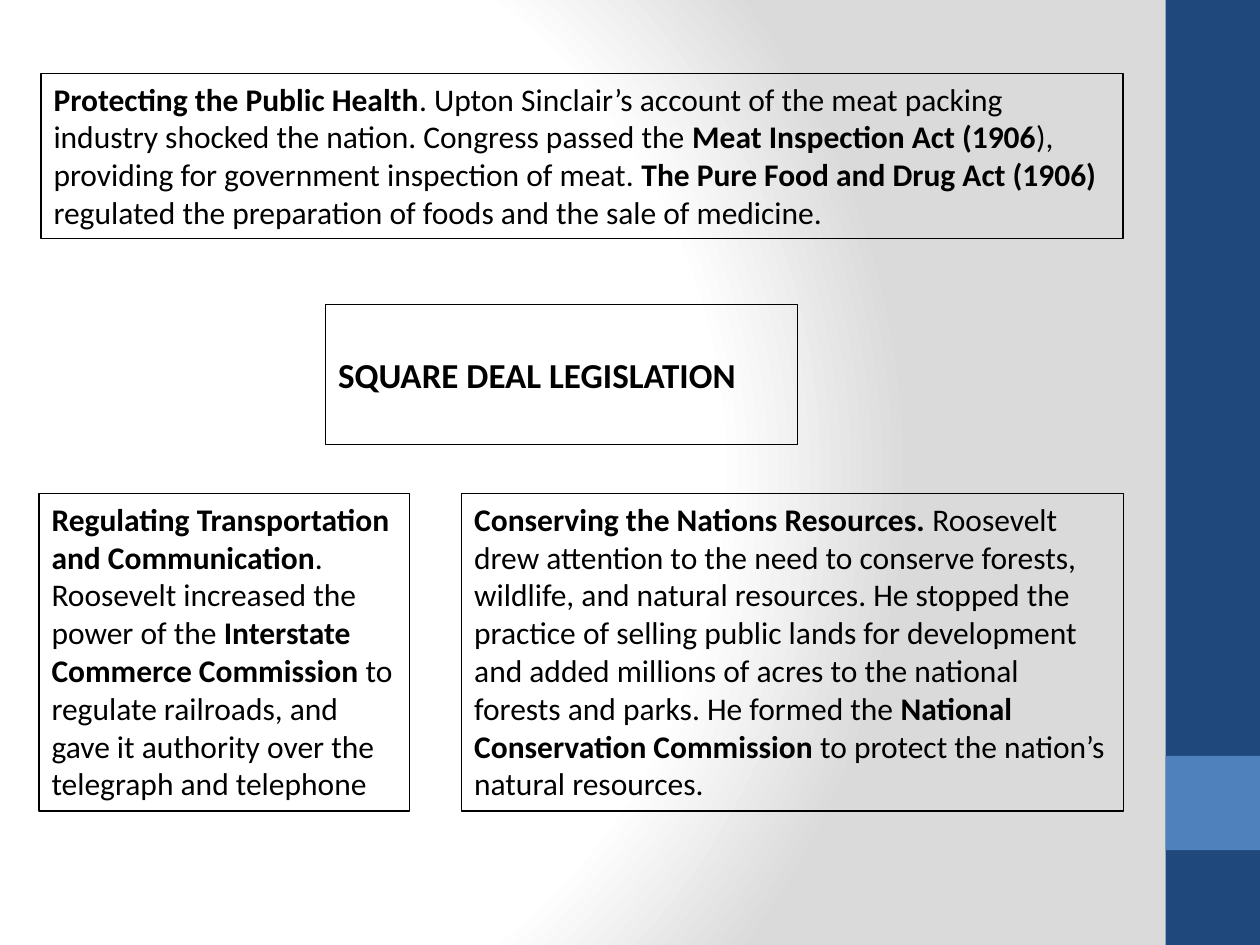
from pptx import Presentation
from pptx.dml.color import RGBColor
from pptx.enum.shapes import MSO_SHAPE
from pptx.enum.text import MSO_ANCHOR, MSO_AUTO_SIZE, PP_ALIGN
from pptx.oxml import parse_xml
from pptx.oxml.ns import nsdecls, qn
from pptx.util import Cm, Pt

BLACK, WHITE, GREY = "000000", "FFFFFF", "DADADA"
NAVY, BLUE = "1F497D", "4F81BD"


def color(hex_string):
    return RGBColor.from_string(hex_string)


class SlideBuilder:
    font = "Calibri"
    body_size = 18
    title_size = 20

    def __init__(self, slide):
        self.slide = slide

    def radial_background(self, stops, focus):
        """Fill the background from (percent, colour) stops around a focus in percent."""
        self.slide.background.fill.solid()
        stop_xml = "".join(
            f'<a:gs pos="{position * 1000}"><a:srgbClr val="{value}"/></a:gs>'
            for position, value in stops
        )
        edges = " ".join(f'{side}="{value * 1000}"' for side, value in zip("ltrb", focus))
        gradient = parse_xml(
            f'<a:gradFill {nsdecls("a")} rotWithShape="1"><a:gsLst>{stop_xml}</a:gsLst>'
            f'<a:path path="circle"><a:fillToRect {edges}/></a:path></a:gradFill>'
        )
        solid = next(self.slide.element.iter(qn("p:bgPr"))).find(qn("a:solidFill"))
        solid.getparent().replace(solid, gradient)

    def band(self, left, top, width, height, fill):
        shape = self.slide.shapes.add_shape(
            MSO_SHAPE.RECTANGLE, Cm(left), Cm(top), Cm(width), Cm(height)
        )
        shape.shadow.inherit = False
        shape.fill.solid()
        shape.fill.fore_color.rgb = color(fill)
        shape.line.fill.background()

    def title(self, left, top, width, height, text):
        shape = self.slide.shapes.title
        shape.left, shape.top, shape.width, shape.height = map(Cm, (left, top, width, height))
        self.outline_and_write(shape, [(text, True)], self.title_size, MSO_ANCHOR.MIDDLE)

    def text_box(self, left, top, width, height, runs):
        shape = self.slide.shapes.add_textbox(Cm(left), Cm(top), Cm(width), Cm(height))
        self.outline_and_write(shape, runs, self.body_size, MSO_ANCHOR.TOP)

    def outline_and_write(self, shape, runs, size, anchor):
        """Frame the shape and write its (text, bold) runs."""
        shape.line.color.rgb = color(BLACK)
        shape.line.width = Pt(0.75)
        frame = shape.text_frame
        frame.word_wrap = True
        frame.auto_size = MSO_AUTO_SIZE.NONE
        frame.vertical_anchor = anchor
        paragraph = frame.paragraphs[0]
        paragraph.alignment = PP_ALIGN.LEFT
        for text, bold in runs:
            run = paragraph.add_run()
            run.text = text
            run.font.name = self.font
            run.font.size = Pt(size)
            run.font.bold = bold
            run.font.color.rgb = color(BLACK)


def main():
    presentation = Presentation()
    presentation.slide_width, presentation.slide_height = Cm(25.4), Cm(19.05)
    slide = presentation.slides.add_slide(presentation.slide_layouts[5])
    builder = SlideBuilder(slide)

    builder.radial_background([(0, WHITE), (75, WHITE), (100, GREY)], (20, 50, 100, 50))
    builder.band(23.5, 0, 1.9, 19.05, NAVY)
    builder.band(23.5, 15.24, 1.9, 1.9, BLUE)

    builder.text_box(0.83, 1.48, 21.81, 3.33, [
        ("Protecting the Public Health", True),
        (". Upton Sinclair’s account of the meat packing industry shocked the nation. "
         "Congress passed the ", False),
        ("Meat Inspection Act (1906", True),
        ("), providing for government inspection of meat. ", False),
        ("The Pure Food and Drug Act (1906) ", True),
        ("regulated the preparation of foods and the sale of medicine.", False),
    ])
    builder.title(6.56, 6.14, 9.52, 2.82, "SQUARE DEAL LEGISLATION")

    lower_top, lower_height = 9.95, 6.4
    builder.text_box(0.79, lower_top, 7.46, lower_height, [
        ("Regulating Transportation and Communication", True),
        (". Roosevelt increased the power of the ", False),
        ("Interstate Commerce Commission ", True),
        ("to regulate railroads, and gave it authority over the telegraph and telephone", False),
    ])
    builder.text_box(9.31, lower_top, 13.34, lower_height, [
        ("Conserving the Nations Resources. ", True),
        ("Roosevelt drew attention to the need to conserve forests, wildlife, and natural "
         "resources. He stopped the practice of selling public lands for development and "
         "added millions of acres to the national forests and parks. He formed the ", False),
        ("National Conservation Commission", True),
        (" to protect the nation’s natural resources.", False),
    ])

    presentation.save("out.pptx")


if __name__ == "__main__":
    main()
